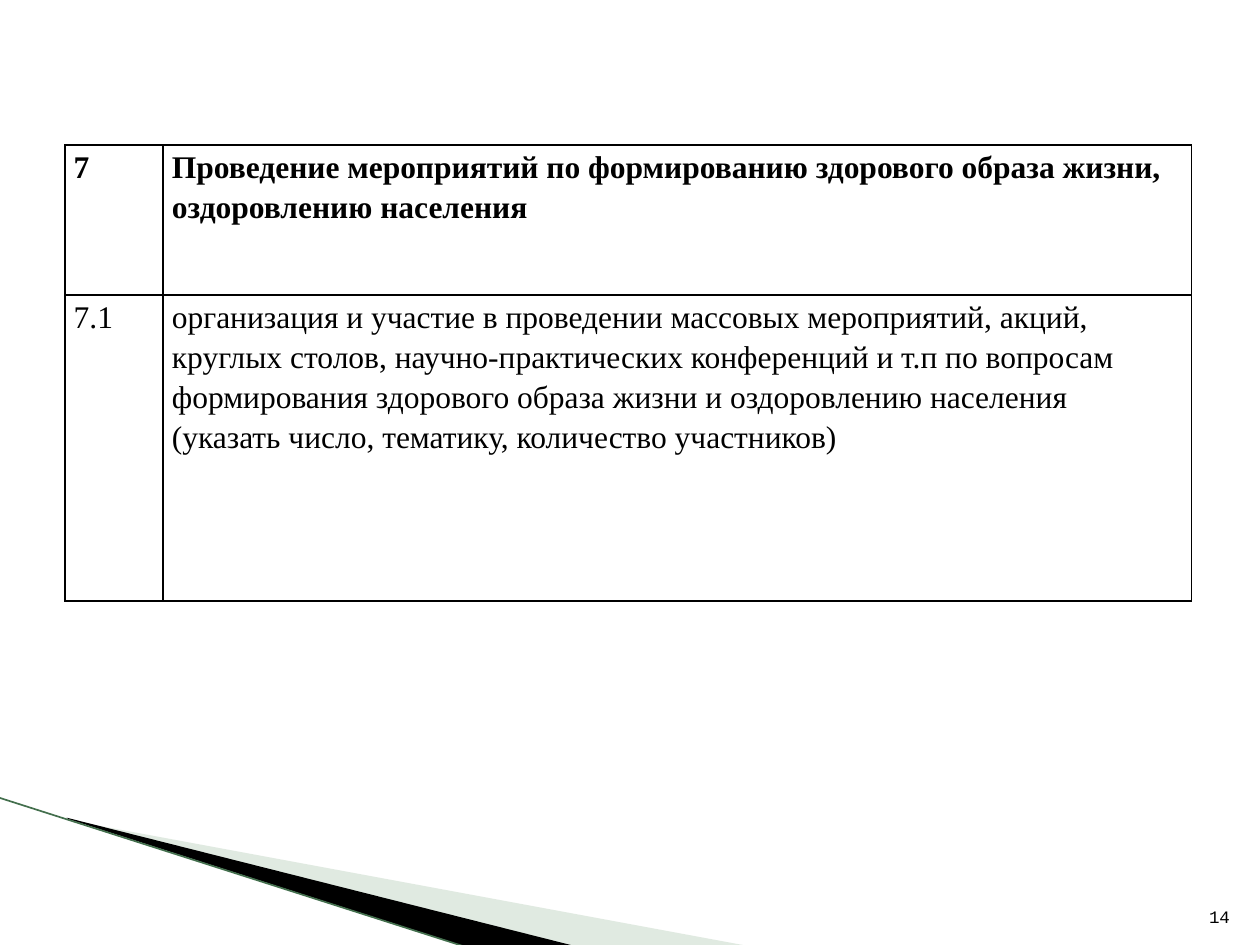
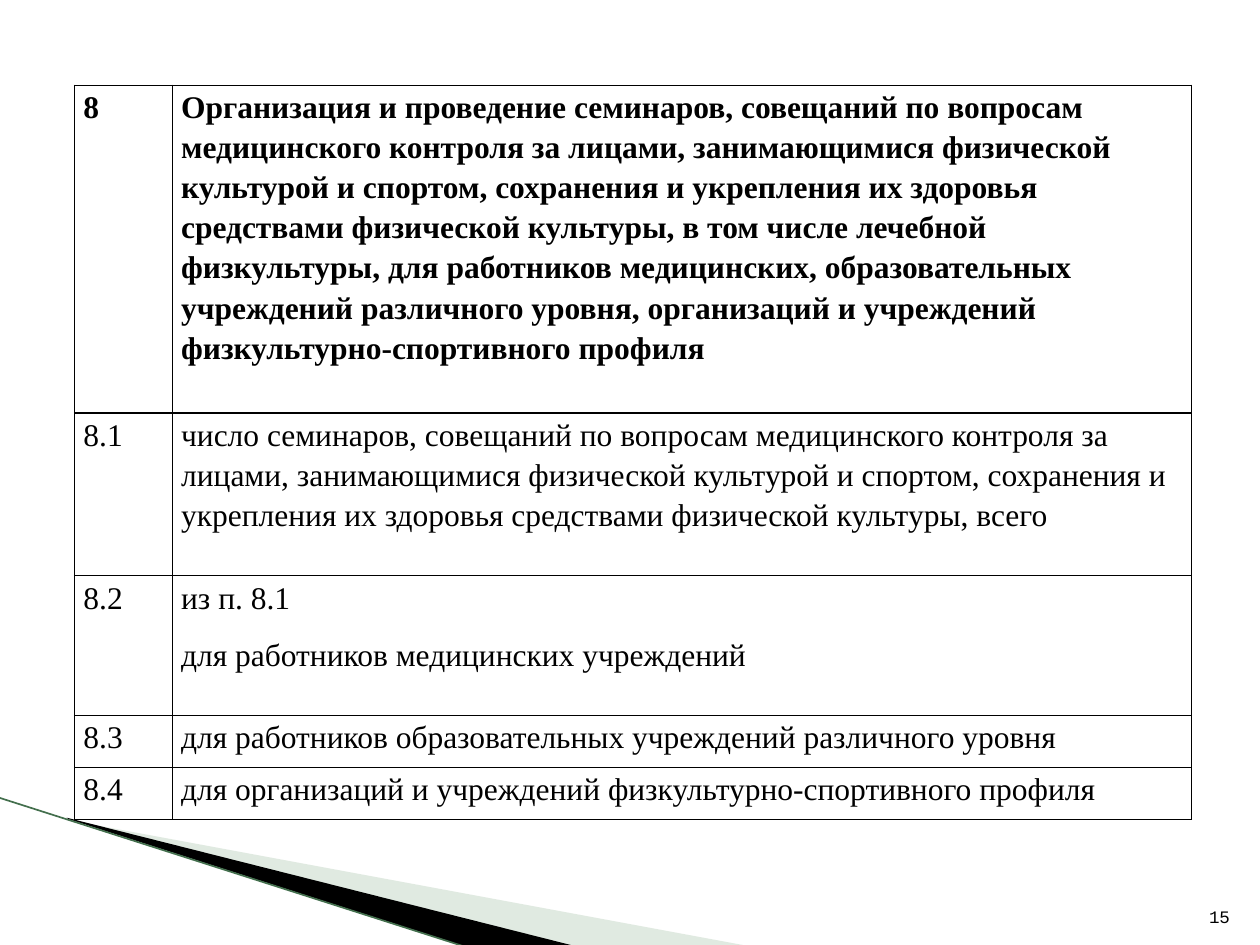
from lxml import etree
from pptx import Presentation
from pptx.dml.color import RGBColor
from pptx.enum.shapes import MSO_CONNECTOR
from pptx.enum.text import MSO_ANCHOR, PP_ALIGN
from pptx.oxml.ns import qn
from pptx.util import Inches, Pt

STRAIGHT = MSO_CONNECTOR.STRAIGHT
BOTTOM = MSO_ANCHOR.BOTTOM
RIGHT = PP_ALIGN.RIGHT

COLORS = {"paper": "FFFFFF", "ink": "000000", "pale": "B3CBB5", "edge": "436F4D"}
BODY_FONT, NUMBER_FONT = "Times New Roman", "Courier New"

# The slide is a grid of 100 columns by 75 rows
SLIDE_WIDTH, SLIDE_HEIGHT = Inches(10), Inches(7.5)
COLUMN, ROW = SLIDE_WIDTH / 100, SLIDE_HEIGHT / 75

# Wedges: box, then corners relative to the box, which they may overrun
PALE_BOX = (7.8, 54.7, 41.6, 15.8)
PALE_WEDGE = [(-2.3, 10.4), (51.7, 20.4), (37.8, 20.4), (-2.3, 10.3)]
DARK_BOX = (-0.6, 63.3, 41.6, 9.2)
DARK_WEDGE = [(5.9, 1.6), (46.3, 11.8), (37.8, 11.9), (6, 1.7)]
EDGE_LINE = [(-0.1, 63.3), (37.1, 75.2)]
NUMBER_BOX = (94.6, 70.1, 4, 4)

# Each slide: number, table box corner, column widths, row heights, table rows
SLIDES = [
    (14, (5.15, 11.5), (7.8, 81.6), (11.9, 24.3), [
        ("7", ["Проведение мероприятий по формированию здорового образа жизни, "
               "оздоровлению населения"]),
        ("7.1", ["организация и участие в проведении массовых мероприятий, акций, "
                 "круглых столов, научно-практических конференций и т.п по вопросам "
                 "формирования здорового образа жизни и оздоровлению населения "
                 "(указать число, тематику, количество участников)"]),
    ]),
    (15, (5.93, 6.77), (7.75, 80.9), (26, 12.92, 11.1, 4.13, 4.13), [
        ("8", ["Организация и проведение семинаров, совещаний по вопросам "
               "медицинского контроля за лицами, занимающимися физической культурой "
               "и спортом, сохранения и укрепления их здоровья средствами физической "
               "культуры, в том числе лечебной физкультуры, для работников "
               "медицинских, образовательных учреждений различного уровня, "
               "организаций и учреждений физкультурно-спортивного профиля"]),
        ("8.1", ["число семинаров, совещаний по вопросам медицинского контроля за "
                 "лицами, занимающимися физической культурой и спортом, сохранения и "
                 "укрепления их здоровья средствами физической культуры, всего"]),
        ("8.2", ["из п. 8.1", "для работников медицинских учреждений"]),
        ("8.3", ["для работников образовательных учреждений различного уровня"]),
        ("8.4", ["для организаций и учреждений физкультурно-спортивного профиля"]),
    ]),
]


def across(columns):
    return round(columns * COLUMN)


def down(rows):
    return round(rows * ROW)


def place(box):
    left, top, width, height = box
    return across(left), down(top), across(width), down(height)


def color(name):
    return RGBColor.from_string(COLORS[name])


def style_font(font, name, size, bold=False):
    font.name, font.size, font.bold = name, Pt(size), bold
    font.color.rgb = color("ink")


def add_wedge(slide, box, corners, fill_name, opacity=100):
    points = [(across(x), down(y)) for x, y in corners]
    builder = slide.shapes.build_freeform(*points[0])
    builder.add_line_segments(points[1:], close=True)
    shape = builder.convert_to_shape()
    # Keep the frame at the box and let the outline run past it
    shape.left, shape.top, shape.width, shape.height = place(box)
    outline = next(shape._element.iter(qn("a:path")))
    outline.set("w", str(shape.width))
    outline.set("h", str(shape.height))
    for node, (x, y) in zip(outline.iter(qn("a:pt")), points):
        node.set("x", str(x))
        node.set("y", str(y))
    shape.shadow.inherit = False
    shape.line.fill.background()
    shape.fill.solid()
    shape.fill.fore_color.rgb = color(fill_name)
    if opacity < 100:
        fill_color = shape.fill._xPr.find(qn("a:solidFill"))[0]
        etree.SubElement(fill_color, qn("a:alpha"), val=str(opacity * 1000))


def add_decoration(slide):
    add_wedge(slide, PALE_BOX, PALE_WEDGE, "pale", 40)
    add_wedge(slide, DARK_BOX, DARK_WEDGE, "ink")
    (x1, y1), (x2, y2) = [(across(x), down(y)) for x, y in EDGE_LINE]
    edge = slide.shapes.add_connector(STRAIGHT, x1, y1, x2, y2)
    edge.line.color.rgb = color("edge")
    edge.line.width = Pt(0.95)
    etree.SubElement(edge._element.spPr, qn("a:effectLst"))


def add_slide_number(slide, number, box):
    text_frame = slide.shapes.add_textbox(*place(box)).text_frame
    text_frame.word_wrap = True
    text_frame.vertical_anchor = BOTTOM
    text_frame.text = str(number)
    paragraph = text_frame.paragraphs[0]
    paragraph.alignment = RIGHT
    style_font(paragraph.runs[0].font, NUMBER_FONT, 10)


def add_borders(cell):
    properties = cell._tc.get_or_add_tcPr()
    for side in ("lnL", "lnR", "lnT", "lnB"):
        line = etree.SubElement(properties, qn(f"a:{side}"), w=str(Pt(1)))
        fill = etree.SubElement(line, qn("a:solidFill"))
        etree.SubElement(fill, qn("a:srgbClr"), val=COLORS["ink"])


def fill_cell(cell, texts, bold):
    cell.margin_left = cell.margin_right = across(0.7)
    cell.margin_top = cell.margin_bottom = 0
    add_borders(cell)
    cell.fill.background()
    cell.text_frame.text = "\n".join(texts)
    for paragraph in cell.text_frame.paragraphs:
        paragraph.line_spacing = 1.15
        paragraph.space_after = Pt(10)
        style_font(paragraph.runs[0].font, BODY_FONT, 18, bold)


def add_report_table(slide, corner, widths, heights, rows):
    box = (*corner, sum(widths), sum(heights))
    table = slide.shapes.add_table(len(rows), len(widths), *place(box)).table
    table.first_row = table.horz_banding = False
    for column, width in zip(table.columns, widths):
        column.width = across(width)
    for index, (row, height) in enumerate(zip(table.rows, heights)):
        row.height = down(height)
        item, texts = rows[index]
        # The first row is the section heading
        fill_cell(row.cells[0], [item], index == 0)
        fill_cell(row.cells[1], texts, index == 0)


def add_table_slide(presentation, number, corner, widths, heights, rows):
    slide = presentation.slides.add_slide(presentation.slide_layouts[6])
    slide.background.fill.solid()
    slide.background.fill.fore_color.rgb = color("paper")
    add_decoration(slide)
    add_slide_number(slide, number, NUMBER_BOX)
    add_report_table(slide, corner, widths, heights, rows)


def main():
    presentation = Presentation()
    presentation.slide_width, presentation.slide_height = SLIDE_WIDTH, SLIDE_HEIGHT
    for content in SLIDES:
        add_table_slide(presentation, *content)
    presentation.save("out.pptx")


if __name__ == "__main__":
    main()
